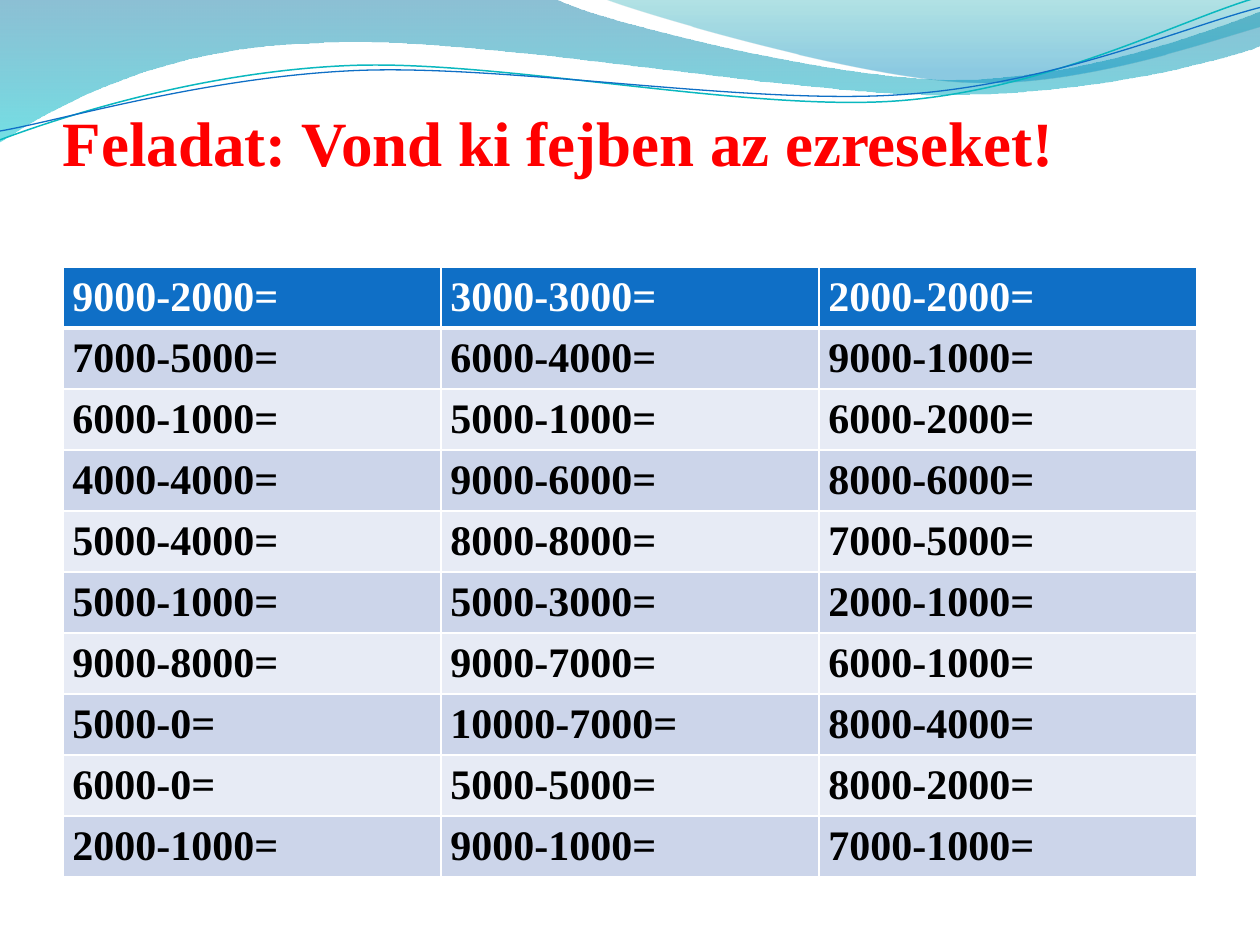
from collections import namedtuple
from math import cos, radians, sin

from lxml.etree import Element, SubElement
from pptx import Presentation
from pptx.dml.color import RGBColor
from pptx.enum.text import MSO_ANCHOR as Anchor
from pptx.oxml.ns import qn
from pptx.util import Inches, Pt

Box = namedtuple("Box", "left top width height")

FONT = "Times New Roman"
RED = RGBColor(0xFF, 0x00, 0x00)
WHITE = RGBColor(0xFF, 0xFF, 0xFF)
BLACK = RGBColor(0x00, 0x00, 0x00)
BLUE = RGBColor(0x0F, 0x6F, 0xC6)
TEAL = RGBColor(0x0A, 0xB8, 0xBF)
BAND_DARK = RGBColor(0xCC, 0xD5, 0xEA)
BAND_LIGHT = RGBColor(0xE7, 0xEB, 0xF5)
DEEP_BLUE = RGBColor(0x00, 0x74, 0xA1)
AQUA = RGBColor(0x00, 0xC6, 0xCF)
SEA_GREEN = RGBColor(0x00, 0xA1, 0xA9)
SKY_BLUE = RGBColor(0x00, 0x8B, 0xBF)

WAVE_COLUMNS = 10
LINE_TILT = -2.7

WIDE_WAVE = [
    [(0, 0)],
    [(4.4, -0.01)],
    [(4.76, 0.17), (6.64, 0.63), (7.58, 0.63)],
    [(8.53, 0.63), (9.58, 0.26), (10, 0.09)],
    [(10.01, 0.36)],
    [(9.83, 0.44), (8.7, 0.76), (7.46, 0.75)],
    [(6.22, 0.75), (3.82, 0.28), (2.57, 0.34)],
    [(1.29, 0.36), (0.46, 0.83), (-0.01, 1.13)],
    [(0, 0)],
]
RIGHT_WAVE = [
    [(4.79, -0.01)],
    [(5.09, 0.11), (6.82, 0.62), (7.69, 0.65)],
    [(8.56, 0.69), (9.61, 0.32), (10, 0.21)],
    [(10, 0)],
    [(4.79, -0.01)],
]
TEAL_LINE = [
    [(0, 1.11)],
    [(0.48, 0.93), (1.58, 0.57), (2.77, 0.52)],
    [(3.95, 0.47), (5.93, 0.89), (7.13, 0.8)],
    [(8.33, 0.71), (9.38, 0.15), (9.98, -0.02)],
]
BLUE_LINE = [
    [(0, 1.04)],
    [(0.47, 0.96), (1.64, 0.61), (2.83, 0.56)],
    [(4.03, 0.51), (5.97, 0.84), (7.17, 0.75)],
    [(8.36, 0.67), (9.41, 0.21), (10, 0.06)],
]

TITLE = "Feladat: Vond ki fejben az ezreseket!"
EXERCISES = [
    ("9000-2000=", "3000-3000=", "2000-2000="),
    ("7000-5000=", "6000-4000=", "9000-1000="),
    ("6000-1000=", "5000-1000=", "6000-2000="),
    ("4000-4000=", "9000-6000=", "8000-6000="),
    ("5000-4000=", "8000-8000=", "7000-5000="),
    ("5000-1000=", "5000-3000=", "2000-1000="),
    ("9000-8000=", "9000-7000=", "6000-1000="),
    ("5000-0=", "10000-7000=", "8000-4000="),
    ("6000-0=", "5000-5000=", "8000-2000="),
    ("2000-1000=", "9000-1000=", "7000-1000="),
]


def share(page_box, left, top, width, height):
    """Return a box given as shares of the page box."""
    return Box(
        round(page_box.left + left * page_box.width),
        round(page_box.top + top * page_box.height),
        round(width * page_box.width),
        round(height * page_box.height),
    )


def turn(segments, center, degrees):
    """Return the segments turned clockwise about a center."""
    (cx, cy), angle = center, radians(degrees)
    c, s = cos(angle), sin(angle)
    return [
        [(cx + (x - cx) * c - (y - cy) * s, cy + (x - cx) * s + (y - cy) * c)
         for x, y in segment]
        for segment in segments
    ]


def draw_path(page, box, segments, close):
    """Draw lines and cubic curves, measured in wave columns of the box."""
    column = box.width / WAVE_COLUMNS
    points = [
        (box.left + x * column, box.top + y * column)
        for segment in segments for x, y in segment
    ]
    builder = page.shapes.build_freeform(*points[0])
    builder.add_line_segments(points[1:], close=close)
    shape = builder.convert_to_shape()
    shape.shadow.inherit = False
    corners = iter(list(shape.element.spPr.iter(qn("a:lnTo"))))
    for segment in segments[1:]:
        steps = [next(corners) for point in segment]
        if len(steps) == 3:
            curve = Element(qn("a:cubicBezTo"))
            steps[0].addprevious(curve)
            for step in steps:
                curve.append(step[0])
                step.getparent().remove(step)
    return shape


def add_wave(page, box, segments, stops):
    """Add a wave filled from top to bottom with see-through colours."""
    shape = draw_path(page, box, segments, True)
    shape.line.fill.background()
    shape.fill.gradient()
    shape.fill.gradient_angle = 270
    for stop, (position, color, opacity) in zip(shape.fill.gradient_stops, stops):
        stop.position = position
        stop.color.rgb = color
    colors = shape.element.spPr.iter(qn("a:srgbClr"))
    for color_element, (position, color, opacity) in zip(colors, stops):
        SubElement(color_element, qn("a:alpha"), val=str(opacity * 1000))


def add_wave_line(page, box, segments, center, color, width):
    """Add an open curved line in a tilted frame."""
    shape = draw_path(page, box, turn(segments, center, -LINE_TILT), False)
    shape.rotation = LINE_TILT
    shape.fill.background()
    shape.line.color.rgb = color
    shape.line.width = Pt(width)


def add_header_waves(page, box):
    """Add the waves and lines along the top of the box."""
    add_wave(page, box, WIDE_WAVE, [(0, DEEP_BLUE, 45), (1, AQUA, 55)])
    add_wave(page, box, RIGHT_WAVE, [(0, SEA_GREEN, 30), (0.8, SKY_BLUE, 45)])
    add_wave_line(page, box, TEAL_LINE, (4.99, 0.58), TEAL, 0.85)
    add_wave_line(page, box, BLUE_LINE, (5, 0.59), BLUE, 0.75)


def format_text(para, size, color):
    """Format the runs of a paragraph in the bold slide font."""
    for span in para.runs:
        span.font.name = FONT
        span.font.size = Pt(size)
        span.font.bold = True
        span.font.color.rgb = color


def add_title(page, box):
    """Add the title one line above the bottom of the box."""
    frame = page.shapes.add_textbox(*box).text_frame
    frame.word_wrap = True
    frame.vertical_anchor = Anchor.BOTTOM
    frame.margin_left = frame.margin_right = 0
    frame.margin_top = Inches(0.05)
    frame.margin_bottom = Inches(0.6)
    frame.text = TITLE
    format_text(frame.paragraphs[0], 36, RED)


def set_borders(cell, widths):
    """Give the cell white borders: left, right, top and bottom widths."""
    properties = cell._tc.get_or_add_tcPr()
    for index, (side, width) in enumerate(zip("LRTB", widths)):
        line = Element(qn(f"a:ln{side}"), w=str(Pt(width)))
        fill = SubElement(line, qn("a:solidFill"))
        SubElement(fill, qn("a:srgbClr"), val=str(WHITE))
        properties.insert(index, line)


def add_exercises(page, box):
    """Add the table of subtractions, with a header and banded rows."""
    table = page.shapes.add_table(len(EXERCISES), len(EXERCISES[0]), *box).table
    for row, exercises in enumerate(EXERCISES):
        fill = BLUE if row == 0 else BAND_DARK if row % 2 else BAND_LIGHT
        for column, exercise in enumerate(exercises):
            cell = table.cell(row, column)
            cell.fill.solid()
            cell.fill.fore_color.rgb = fill
            cell.margin_left = cell.margin_right = Pt(5.4)
            cell.margin_top = cell.margin_bottom = 0
            cell.text = exercise
            para = cell.text_frame.paragraphs[0]
            para.line_spacing = 1.15
            format_text(para, 24, BLACK if row else WHITE)
            set_borders(cell, (1, 1, 3 if row == 1 else 1, 1 if row else 3))


def main():
    """Build the slide and save it."""
    deck = Presentation()
    deck.slide_width, deck.slide_height = Inches(10), Inches(7.5)
    page = deck.slides.add_slide(deck.slide_layouts[6])
    page_box = Box(0, 0, deck.slide_width, deck.slide_height)
    add_header_waves(page, page_box)
    add_title(page, share(page_box, 0.05, 0.77 / 7.5, 0.9, 1.25 / 7.5))
    add_exercises(page, share(page_box, 0.05, 2.12 / 7.5, 0.9, 4.84 / 7.5))
    deck.save("out.pptx")


if __name__ == "__main__":
    main()
